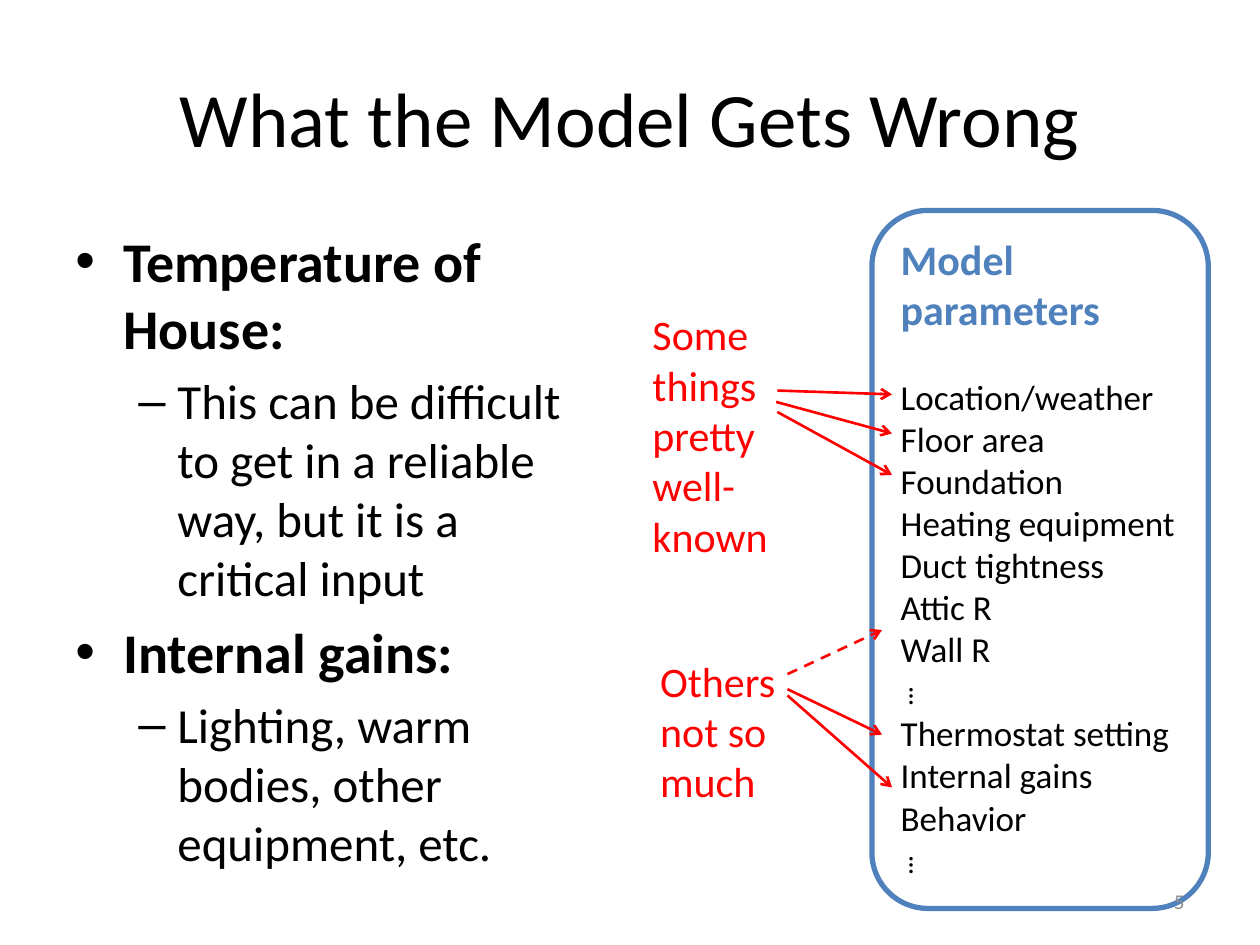
from lxml.etree import SubElement
from pptx import Presentation
from pptx.dml.color import RGBColor
from pptx.enum.dml import MSO_LINE_DASH_STYLE as Dash
from pptx.enum.shapes import MSO_CONNECTOR as Link, MSO_SHAPE as Shape
from pptx.enum.text import MSO_ANCHOR as Anchor, PP_ALIGN as Align
from pptx.oxml.ns import qn
from pptx.util import Inches, Pt

COLORS = {"black": "000000", "white": "FFFFFF", "blue": "4F81BD",
          "red": "FF0000", "gray": "8C8C8C"}
DOTS = "⋮"


def rgb(name):
    return RGBColor.from_string(COLORS[name])


def write(frame, text, size=20, color="black", bold=False, font="Calibri",
          align=Align.LEFT, before=0, bullet=None, indent=(0, 0)):
    """Add one paragraph, using the empty first one when there is one."""
    para = frame.paragraphs[0]
    if para.runs:
        para = frame.add_paragraph()
    para.alignment = align
    para.space_before = Pt(before)
    run = para.add_run()
    run.text = text
    run.font.size, run.font.bold, run.font.name = Pt(size), bold, font
    run.font.color.rgb = rgb(color)
    if bullet:
        props = para._p.get_or_add_pPr()
        left, hang = indent
        props.set("marL", str(Inches(left)))
        props.set("indent", str(Inches(-hang)))
        SubElement(props, qn("a:buFont")).set("typeface", "Arial")
        SubElement(props, qn("a:buChar")).set("char", bullet)


def text_box(slide, box, anchor=Anchor.TOP):
    frame = slide.shapes.add_textbox(*map(Inches, box)).text_frame
    frame.word_wrap = True
    frame.vertical_anchor = anchor
    return frame


def add_box(slide, kind, box):
    shape = slide.shapes.add_shape(kind, *map(Inches, box))
    shape.shadow.inherit = False
    shape.text_frame.word_wrap = True
    shape.text_frame.vertical_anchor = Anchor.TOP
    return shape


def add_title(slide, box, text):
    write(text_box(slide, box, Anchor.MIDDLE), text, size=44, align=Align.CENTER)


def add_bullets(slide, box, topics):
    frame = text_box(slide, box)
    for head, detail in topics:
        write(frame, head, size=32, bold=True, before=6.4,
              bullet="•", indent=(0.38, 0.38))
        write(frame, detail, size=28, before=5.6,
              bullet="–", indent=(0.81, 0.31))


def add_panel(slide, box, head, items):
    panel = add_box(slide, Shape.ROUNDED_RECTANGLE, box)
    panel.fill.background()
    panel.line.color.rgb = rgb("blue")
    panel.line.width = Pt(3)
    frame = panel.text_frame
    write(frame, head, size=24, color="blue", bold=True)
    for row, item in enumerate(items):
        write(frame, item, before=0 if row else 24,
              font="DejaVu Sans Mono" if item == DOTS else "Calibri")


def add_arrow(slide, start, end, dashed=False):
    arrow = slide.shapes.add_connector(Link.STRAIGHT, *map(Inches, start + end))
    arrow.line.color.rgb = rgb("red")
    arrow.line.width = Pt(1.5)
    if dashed:
        arrow.line.dash_style = Dash.DASH
    SubElement(arrow.line._get_or_add_ln(), qn("a:tailEnd")).set("type", "arrow")
    SubElement(arrow._element.spPr, qn("a:effectLst"))


def add_note(slide, kind, box, text, arrows):
    """Add a red remark; its arrows are offsets from the corner of the box."""
    note = add_box(slide, kind, box)
    note.fill.solid()
    note.fill.fore_color.rgb = rgb("white")
    tint = note._element.spPr.find(qn("a:solidFill"))[0]
    SubElement(tint, qn("a:alpha")).set("val", "72000")
    note.line.fill.background()
    write(note.text_frame, text, size=24, color="red")
    left, top = box[:2]
    for x1, y1, x2, y2, dashed in arrows:
        add_arrow(slide, (left + x1, top + y1), (left + x2, top + y2), dashed)


def add_number(slide, box, text):
    write(text_box(slide, box, Anchor.MIDDLE), text, size=12, color="gray",
          align=Align.RIGHT)


def main():
    deck = Presentation()
    deck.slide_width, deck.slide_height = Inches(10), Inches(7.5)
    slide = deck.slides.add_slide(deck.slide_layouts[6])
    add_title(slide, (0.5, 0.3, 9, 1.25), "What the Model Gets Wrong")
    add_bullets(slide, (0.5, 1.75, 4.08, 4.95), [
        ("Temperature of House:",
         "This can be difficult to get in a reliable way, "
         "but it is a critical input"),
        ("Internal gains:", "Lighting, warm bodies, other equipment, etc."),
    ])
    add_panel(slide, (6.92, 1.67, 2.67, 5.54), "Model parameters", [
        "Location/weather", "Floor area", "Foundation", "Heating equipment",
        "Duct tightness", "Attic R", "Wall R", DOTS,
        "Thermostat setting", "Internal gains", "Behavior", DOTS,
    ])
    add_note(slide, Shape.RECTANGLE, (5.08, 2.4, 1.58, 2.12),
             "Some things pretty well-known", [
                 (1.09, 0.7, 2, 0.73, False),
                 (1.08, 0.79, 2, 1.04, False),
                 (1.09, 0.87, 2, 1.37, False)])
    add_note(slide, Shape.ROUNDED_RECTANGLE, (5.08, 5.09, 1.25, 1.43),
             "Others not so much", [
                 (1.17, 0.26, 1.92, -0.09, True),
                 (1.17, 0.43, 2, 1.16, False),
                 (1.17, 0.38, 1.92, 0.74, False)])
    add_number(slide, (7.17, 6.95, 2.33, 0.4), "5")
    deck.save("out.pptx")


if __name__ == "__main__":
    main()
